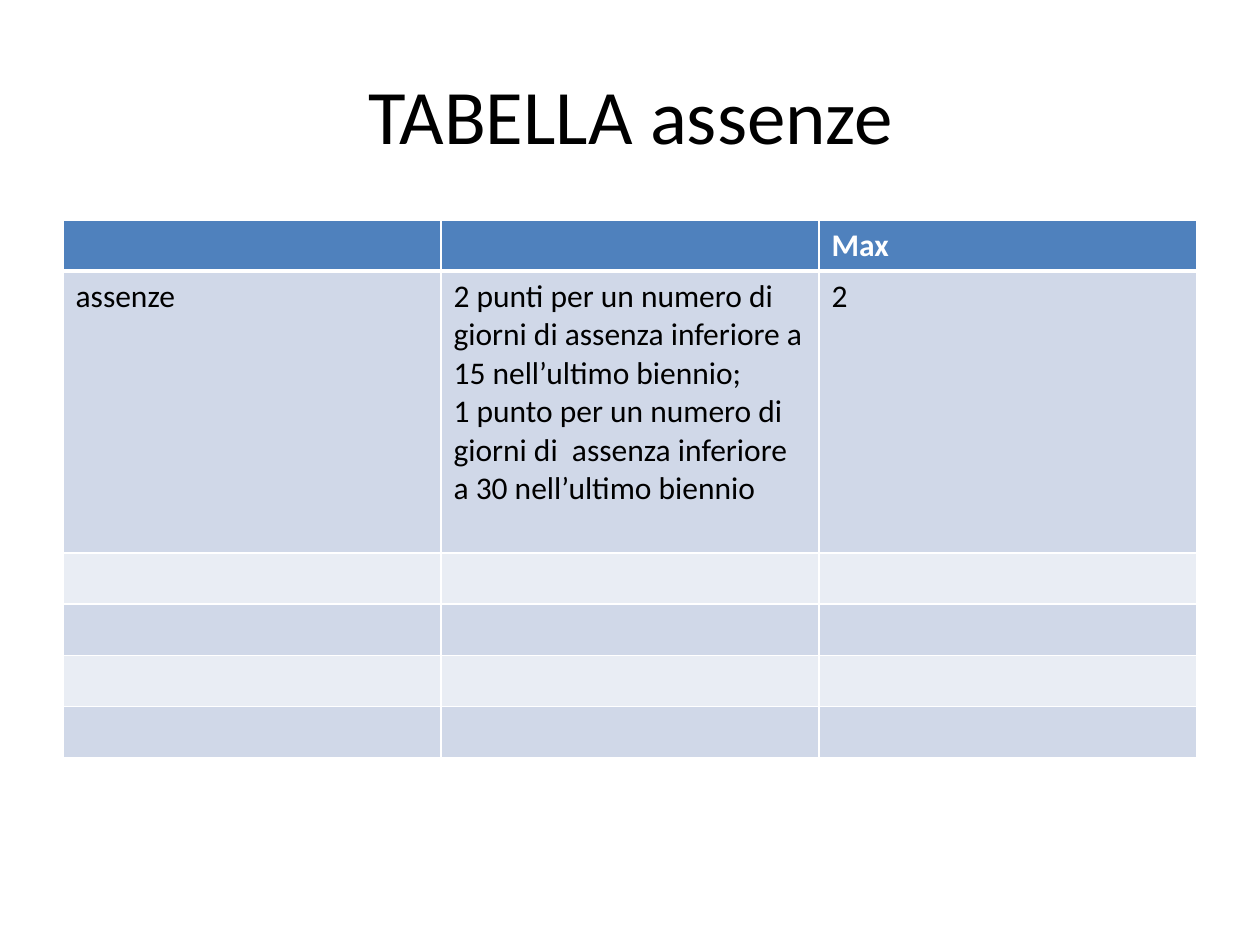
from lxml.etree import SubElement
from pptx import Presentation
from pptx.dml.color import RGBColor
from pptx.enum.text import MSO_ANCHOR, PP_ALIGN
from pptx.oxml.ns import qn
from pptx.util import Emu, Pt

EMU_PER_PX = 914400 / 126
WHITE, BLACK = "FFFFFF", "000000"
HEADER_BLUE, BAND_DARK, BAND_LIGHT = "4F81BD", "D0D8E8", "E9EDF4"


def px(length):
    return Emu(round(length * EMU_PER_PX))


def color(hex_value):
    return RGBColor.from_string(hex_value)


class SlideBuilder:
    """Holds the text style and the current slide."""

    font = "Calibri"

    def __init__(self, slide):
        self.slide = slide

    def style(self, text_frame, size, hex_value, bold=False):
        for paragraph in text_frame.paragraphs:
            for run in paragraph.runs:
                run.font.name = self.font
                run.font.size = Pt(size)
                run.font.bold = bold
                run.font.color.rgb = color(hex_value)

    def title(self, text, left, top, width, height):
        heading = self.slide.shapes.title
        heading.left, heading.top = px(left), px(top)
        heading.width, heading.height = px(width), px(height)
        frame = heading.text_frame
        frame.text = text
        frame.vertical_anchor = MSO_ANCHOR.MIDDLE
        frame.paragraphs[0].alignment = PP_ALIGN.CENTER
        self.style(frame, 44, BLACK)

    def border(self, cell, side, points):
        properties = cell._tc.get_or_add_tcPr()
        line = SubElement(properties, qn(f"a:ln{side}"), w=str(Pt(points)))
        fill = SubElement(line, qn("a:solidFill"))
        SubElement(fill, qn("a:srgbClr"), val=WHITE)

    def table(self, rows, left, top, column_width, row_heights):
        columns = len(rows[0])
        grid = self.slide.shapes.add_table(
            len(rows), columns, px(left), px(top),
            px(column_width * columns), px(sum(row_heights))).table
        for column in grid.columns:
            column.width = px(column_width)
        for r, (texts, height) in enumerate(zip(rows, row_heights)):
            grid.rows[r].height = px(height)
            header = r == 0
            band = HEADER_BLUE if header else BAND_DARK if r % 2 else BAND_LIGHT
            # A thick rule separates the header from the body
            widths = {"L": 1, "R": 1, "T": 3 if r == 1 else 1, "B": 3 if header else 1}
            for c, text in enumerate(texts):
                cell = grid.cell(r, c)
                for side, points in widths.items():
                    self.border(cell, side, points)
                cell.fill.solid()
                cell.fill.fore_color.rgb = color(band)
                if text:
                    cell.text_frame.text = text
                    self.style(cell.text_frame, 18, WHITE if header else BLACK, header)


def main():
    presentation = Presentation()
    presentation.slide_width, presentation.slide_height = px(1260), px(945)
    title_only = presentation.slide_layouts[5]
    builder = SlideBuilder(presentation.slides.add_slide(title_only))

    # Heading
    builder.title("TABELLA assenze", 64, 35, 1134, 158)

    # Absence scores, followed by four blank rows
    criteria = ("2 punti per un numero di giorni di assenza inferiore a 15 nell’ultimo biennio;\n"
                "1 punto per un numero di giorni di  assenza inferiore a 30 nell’ultimo biennio")
    scores = [["", "", "Max"], ["assenze", criteria, "2"]] + [[""] * 3] * 4
    builder.table(scores, 63, 220, 378, [51, 282] + [51] * 4)

    presentation.save("out.pptx")


if __name__ == "__main__":
    main()
